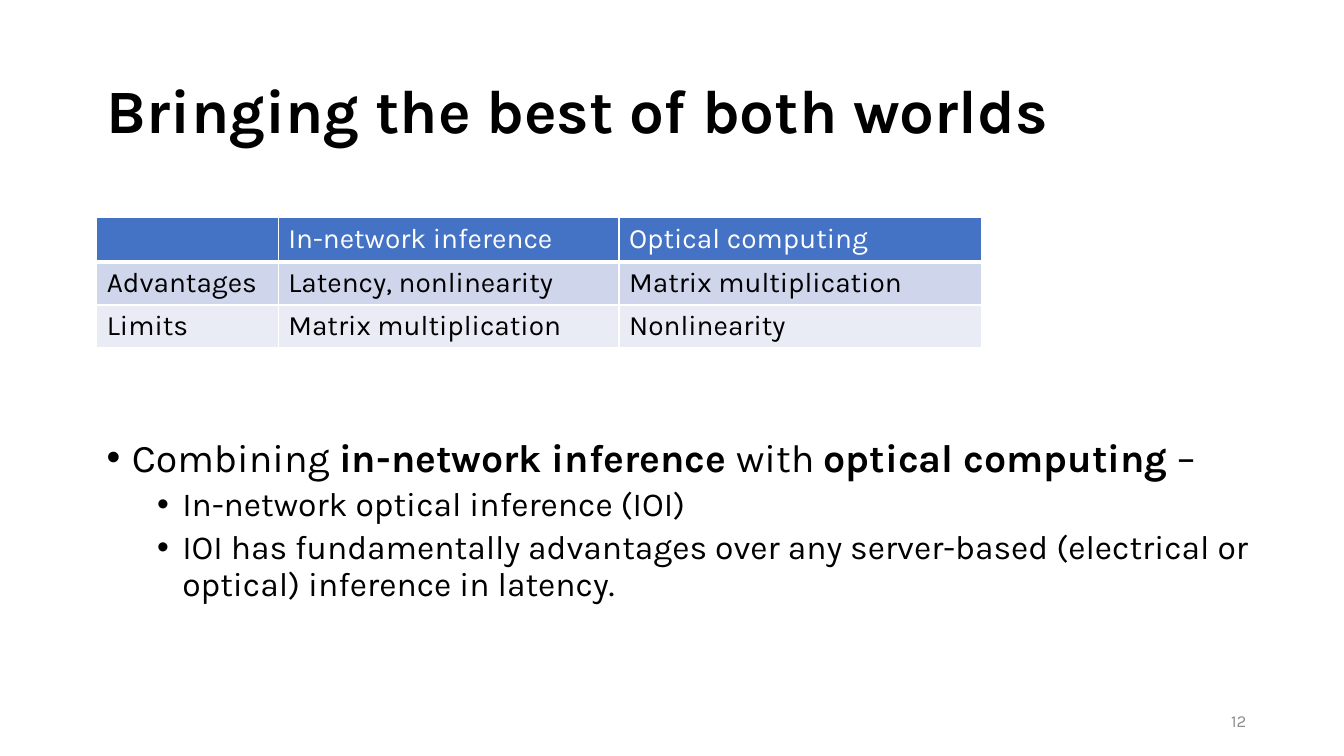
from lxml.etree import SubElement
from pptx import Presentation
from pptx.dml.color import RGBColor
from pptx.enum.text import MSO_ANCHOR as Anchor, MSO_AUTO_SIZE as AutoSize, PP_ALIGN as Align
from pptx.oxml.ns import qn
from pptx.util import Inches, Pt

FONT = "Karla"
COLORS = {
    "text": "000000",
    "white": "FFFFFF",
    "header": "4472C4",
    "odd": "CFD5EA",
    "even": "E9EBF5",
    "number": "8C8C8C",
}
COLUMN_WIDTHS = [1.8, 3.38, 3.6]
ROW_HEIGHT = 0.41
COMPARISON = [
    ("", "In-network inference", "Optical computing"),
    ("Advantages", "Latency, nonlinearity", "Matrix multiplication"),
    ("Limits", "Matrix multiplication", "Nonlinearity"),
]
BULLETS = [
    (0, [("Combining ", False), ("in-network inference ", True), ("with ", False),
         ("optical computing", True), (" –", False)]),
    (1, [("In-network optical inference (IOI)", False)]),
    (1, [("IOI has fundamentally advantages over any server-based "
          "(electrical or optical) inference in latency.", False)]),
]


def write(paragraph, text, size, color="text", bold=False, align=Align.LEFT, spacing=1.0):
    """Add a formatted run of text to a paragraph."""
    paragraph.alignment = align
    paragraph.line_spacing = spacing
    run = paragraph.add_run()
    run.text = text
    run.font.name = FONT
    run.font.size = Pt(size)
    run.font.bold = bold
    run.font.color.rgb = RGBColor.from_string(COLORS[color])


def prepare_frame(shape, anchor):
    """Set wrapping and anchoring and return the text frame."""
    frame = shape.text_frame
    frame.word_wrap = True
    frame.auto_size = AutoSize.NONE
    frame.vertical_anchor = anchor
    return frame


def add_text_box(slide, box, anchor):
    """Add a text box and return its text frame."""
    return prepare_frame(slide.shapes.add_textbox(*map(Inches, box)), anchor)


def add_title(slide, box, text):
    """Place and fill the title placeholder."""
    title = slide.shapes.title
    title.left, title.top, title.width, title.height = map(Inches, box)
    frame = prepare_frame(title, Anchor.MIDDLE)
    write(frame.paragraphs[0], text, 44, bold=True, spacing=0.9)


def set_border(cell, side, width):
    """Draw a white line on one side of a cell."""
    line = SubElement(cell._tc.get_or_add_tcPr(), qn(f"a:ln{side}"), w=str(Pt(width)))
    fill = SubElement(line, qn("a:solidFill"))
    SubElement(fill, qn("a:srgbClr"), val=COLORS["white"])


def add_comparison(slide, left, top):
    """Add the table that compares the two approaches."""
    table = slide.shapes.add_table(
        len(COMPARISON), len(COLUMN_WIDTHS), Inches(left), Inches(top),
        Inches(sum(COLUMN_WIDTHS)), Inches(ROW_HEIGHT * len(COMPARISON))).table
    for column, width in zip(table.columns, COLUMN_WIDTHS):
        column.width = Inches(width)
    for row_index, (texts, fill) in enumerate(zip(COMPARISON, ("header", "odd", "even"))):
        table.rows[row_index].height = Inches(ROW_HEIGHT)
        for column_index, text in enumerate(texts):
            cell = table.cell(row_index, column_index)
            top_width = 3 if row_index == 1 else 1
            bottom_width = 3 if row_index == 0 else 1
            for side, width in zip("LRTB", (1, 1, top_width, bottom_width)):
                set_border(cell, side, width)
            cell.fill.solid()
            cell.fill.fore_color.rgb = RGBColor.from_string(COLORS[fill])
            paragraph = cell.text_frame.paragraphs[0]
            paragraph.font.size = Pt(20)
            if text:
                write(paragraph, text, 20, "text" if row_index else "white")


def add_bullets(slide, box):
    """Add the two-level bullet list."""
    frame = add_text_box(slide, box, Anchor.TOP)
    for index, (level, runs) in enumerate(BULLETS):
        paragraph = frame.add_paragraph() if index else frame.paragraphs[0]
        paragraph.level = level
        paragraph.space_before = Pt(5 if index else 0)
        properties = paragraph._p.get_or_add_pPr()
        properties.set("marL", str(Inches(0.25 + 0.5 * level)))
        properties.set("indent", str(Inches(-0.25)))
        paragraph.line_spacing = 0.9
        SubElement(properties, qn("a:buFont"), typeface="Arial")
        SubElement(properties, qn("a:buChar"), char="•")
        for text, bold in runs:
            write(paragraph, text, 28 - 4 * level, bold=bold, spacing=0.9)


def add_slide_number(slide, box, number):
    """Add the slide number at the lower right."""
    frame = add_text_box(slide, box, Anchor.MIDDLE)
    write(frame.paragraphs[0], number, 12, "number", align=Align.RIGHT)


def main():
    """Build and save the slide."""
    presentation = Presentation()
    presentation.slide_width = Inches(13.33)
    presentation.slide_height = Inches(7.5)
    slide = presentation.slides.add_slide(presentation.slide_layouts.get_by_name("Title Only"))
    add_title(slide, (0.96, 0.4, 11.5, 1.45), "Bringing the best of both worlds")
    add_bullets(slide, (0.96, 4.3, 11.79, 2.86))
    add_slide_number(slide, (9.46, 6.95, 3, 0.4), "12")
    add_comparison(slide, 0.96, 2.16)
    presentation.save("out.pptx")


if __name__ == "__main__":
    main()
